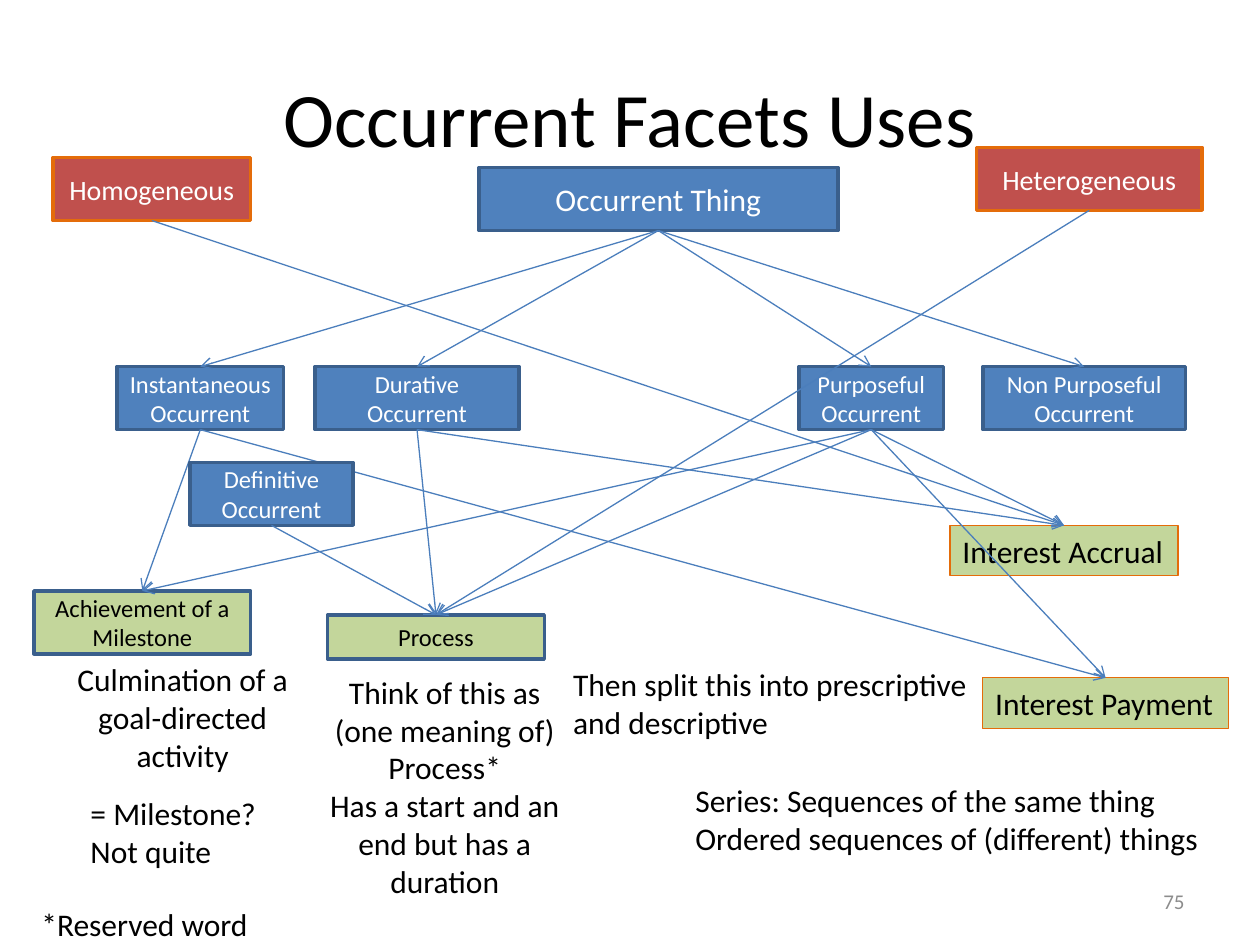
from dataclasses import dataclass

from lxml import etree
from pptx import Presentation
from pptx.dml.color import RGBColor
from pptx.enum.shapes import MSO_CONNECTOR, MSO_SHAPE
from pptx.enum.text import MSO_ANCHOR, MSO_AUTO_SIZE, PP_ALIGN
from pptx.oxml.ns import qn
from pptx.util import Inches, Pt

LEFT, CENTER, RIGHT = PP_ALIGN.LEFT, PP_ALIGN.CENTER, PP_ALIGN.RIGHT
TOP, MIDDLE = MSO_ANCHOR.TOP, MSO_ANCHOR.MIDDLE
FIT = MSO_AUTO_SIZE.SHAPE_TO_FIT_TEXT
RECT, STRAIGHT = MSO_SHAPE.RECTANGLE, MSO_CONNECTOR.STRAIGHT
BOTTOM_SIDE, TOP_SIDE = 2, 0


@dataclass(frozen=True)
class Theme:
    font: str = "Calibri"
    black: str = "000000"
    white: str = "FFFFFF"
    grey: str = "8C8C8C"
    blue: str = "4F81BD"
    navy: str = "3A5F8C"
    red: str = "C0504D"
    orange: str = "E46C0A"
    green: str = "C3D69B"
    link: str = "4B7EBC"
    title: int = 44
    body: int = 18
    facet: int = 16
    node: int = 14
    number: int = 12
    thick: float = 2
    thin: float = 0.75


T = Theme()

# Box styles: fill, line, line width, text colour, text size
ROOT = (T.blue, T.navy, T.thick, T.white, T.body)
FACET = (T.red, T.orange, T.thick, T.white, T.facet)
KIND = (T.blue, T.navy, T.thick, T.white, T.node)
USE = (T.green, T.navy, T.thick, T.black, T.node)
EXAMPLE = (T.green, T.orange, T.thin, T.black, T.body)

# Name: text, left, top, width, height, style
BOXES = {
    "thing": ("Occurrent Thing", 3.8, 1.33, 2.85, 0.5, ROOT),
    "homogeneous": ("Homogeneous", 0.42, 1.25, 1.57, 0.5, FACET),
    "heterogeneous": ("Heterogeneous", 7.75, 1.17, 1.79, 0.5, FACET),
    "instantaneous": ("Instantaneous Occurrent", 0.93, 2.91, 1.32, 0.5, KIND),
    "durative": ("Durative Occurrent", 2.5, 2.91, 1.62, 0.5, KIND),
    "purposeful": ("Purposeful\vOccurrent", 6.34, 2.91, 1.15, 0.5, KIND),
    "non_purposeful": ("Non Purposeful Occurrent", 7.8, 2.91, 1.61, 0.5, KIND),
    "process": ("Process", 2.6, 4.88, 1.72, 0.35, USE),
    "achievement": ("Achievement of a Milestone", 0.27, 4.69, 1.72, 0.5, USE),
    "accrual": ("Interest Accrual", 7.54, 4.17, 1.81, 0.4, EXAMPLE),
    "payment": ("Interest Payment", 7.8, 5.38, 1.95, 0.4, EXAMPLE),
}
DEFINITIVE = ("Definitive Occurrent", 1.51, 3.67, 1.29, 0.5, KIND)

LINKS = {
    "thing": ("instantaneous", "durative", "purposeful", "non_purposeful"),
    "homogeneous": ("accrual",),
    "heterogeneous": ("process",),
    "instantaneous": ("achievement", "payment"),
    "durative": ("process", "accrual"),
    "purposeful": ("achievement", "process", "accrual", "payment"),
}

# Paragraphs, left, top, width, height, alignment, wrap
NOTES = [
    ("Think of this as (one meaning of) Process*\n"
     "Has a start and an end but has a duration", 2.5, 5.29, 2.06, 1.92, CENTER, True),
    ("Culmination of a goal-directed activity", 0.42, 5.19, 2.06, 1.01, CENTER, True),
    ("= Milestone?\nNot quite", 0.62, 6.25, 1.53, 0.71, LEFT, False),
    ("Then split this into prescriptive\nand descriptive",
     4.45, 5.23, 3.42, 0.71, LEFT, False),
    ("Series: Sequences of the same thing\nOrdered sequences of (different) things",
     5.42, 6.15, 4.25, 0.71, LEFT, False),
    ("*Reserved word", 0.23, 7.13, 1.86, 0.4, LEFT, False),
]


def rgb(value):
    return RGBColor.from_string(value)


def write(tf, text, size, color, align, anchor=MIDDLE, wrap=True):
    tf.text = text
    tf.word_wrap = wrap
    tf.vertical_anchor = anchor
    for p in tf.paragraphs:
        p.alignment = align
        p.font.name = T.font
        p.font.size = Pt(size)
        p.font.color.rgb = rgb(color)


def add_box(slide, text, x, y, w, h, style):
    fill, line, width, color, size = style
    s = slide.shapes.add_shape(RECT, Inches(x), Inches(y), Inches(w), Inches(h))
    s.shadow.inherit = False
    s.fill.solid()
    s.fill.fore_color.rgb = rgb(fill)
    s.line.color.rgb = rgb(line)
    s.line.width = Pt(width)
    if style is EXAMPLE:
        write(s.text_frame, text, size, color, LEFT, TOP, wrap=False)
        s.text_frame.auto_size = FIT
    else:
        write(s.text_frame, text, size, color, CENTER)
    return s


def add_link(slide, start, end):
    c = slide.shapes.add_connector(STRAIGHT, 0, 0, 0, 0)
    c.begin_connect(start, BOTTOM_SIDE)
    c.end_connect(end, TOP_SIDE)
    c.line.color.rgb = rgb(T.link)
    c.line.width = Pt(T.thin)
    etree.SubElement(c.line._get_or_add_ln(), qn("a:tailEnd"), type="arrow")
    etree.SubElement(c._element.spPr, qn("a:effectLst"))


def add_text(slide, text, x, y, w, h, align, wrap):
    s = slide.shapes.add_textbox(Inches(x), Inches(y), Inches(w), Inches(h))
    write(s.text_frame, text, T.body, T.black, align, TOP, wrap)
    s.text_frame.auto_size = FIT


def add_page_number(slide, number):
    s = slide.shapes.add_textbox(Inches(7.17), Inches(6.95), Inches(2.33), Inches(0.4))
    write(s.text_frame, number, T.number, T.grey, RIGHT)


def main():
    prs = Presentation()
    prs.slide_width, prs.slide_height = Inches(10), Inches(7.5)
    slide = prs.slides.add_slide(prs.slide_layouts[5])

    # Title
    title = slide.shapes.title
    title.left, title.top = Inches(0.5), Inches(0.3)
    title.width, title.height = Inches(9), Inches(1.25)
    write(title.text_frame, "Occurrent Facets Uses", T.title, T.black, CENTER)

    # Boxes and the links between them
    boxes = {name: add_box(slide, *box) for name, box in BOXES.items()}
    for start, ends in LINKS.items():
        for end in ends:
            add_link(slide, boxes[start], boxes[end])

    # This box lies over the links that pass behind it
    definitive = add_box(slide, *DEFINITIVE)
    add_link(slide, definitive, boxes["process"])

    # Notes and page number
    for note in NOTES:
        add_text(slide, *note)
    add_page_number(slide, "75")

    prs.save("out.pptx")


if __name__ == "__main__":
    main()
